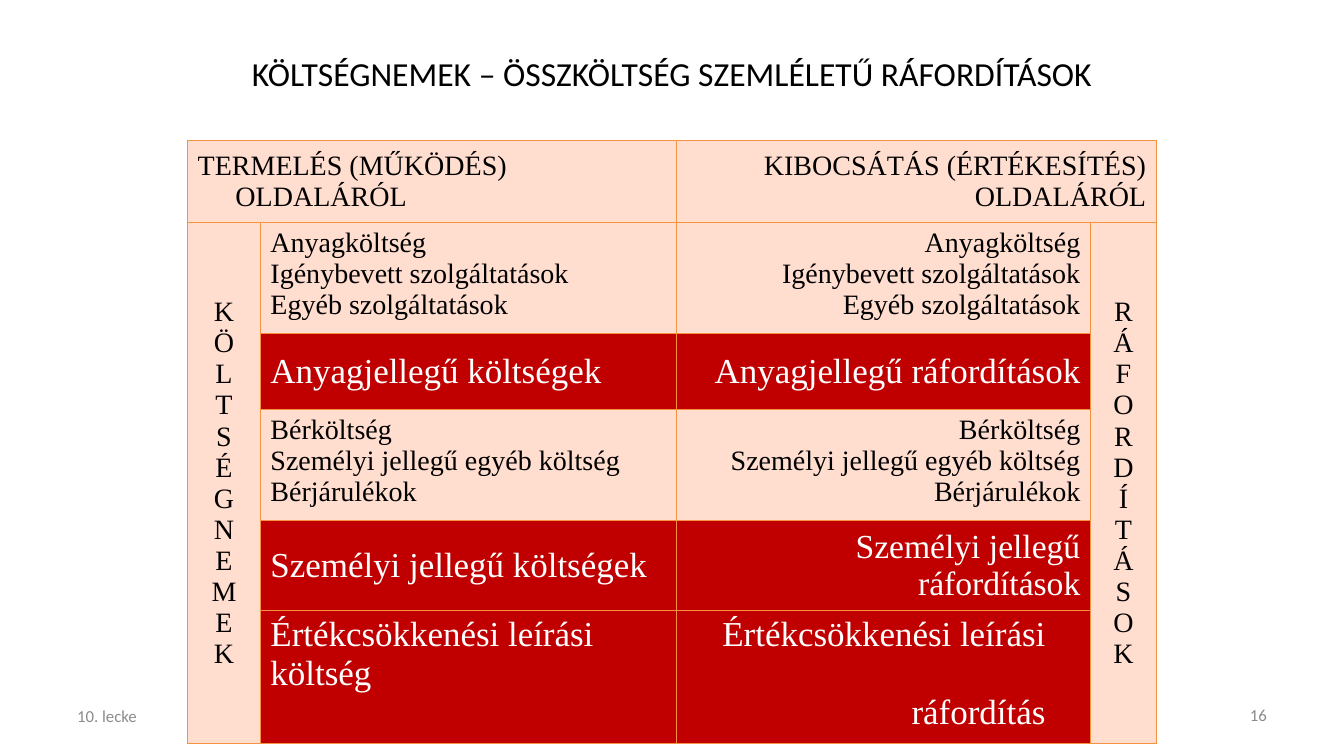
import pptx
import pptx.dml.color
import pptx.enum.text
import pptx.oxml
import pptx.oxml.ns
import pptx.util

Pt = pptx.util.Pt
RGBColor = pptx.dml.color.RGBColor
ALIGN = pptx.enum.text.PP_ALIGN
ANCHOR = pptx.enum.text.MSO_ANCHOR

BLACK = RGBColor(0x00, 0x00, 0x00)
WHITE = RGBColor(0xFF, 0xFF, 0xFF)
GRAY = RGBColor(0x8C, 0x8C, 0x8C)
RED = RGBColor(0xC0, 0x00, 0x00)
PEACH = RGBColor(0xFF, 0xDD, 0xCF)
ORANGE = RGBColor(0xF6, 0x92, 0x40)

COLUMN_WIDTHS = [52, 297, 296, 47]
ROW_HEIGHTS = [59, 59, 54, 76, 58, 63]
HANGING = 27

HEADINGS = [
    (0, "TERMELÉS (MŰKÖDÉS) OLDALÁRÓL", ALIGN.LEFT),
    (2, "KIBOCSÁTÁS (ÉRTÉKESÍTÉS) OLDALÁRÓL", ALIGN.RIGHT),
]
SIDE_LABELS = [(0, "KÖLTSÉGNEMEK"), (3, "RÁFORDÍTÁSOK")]
MATERIALS = "Anyagköltség\nIgénybevett szolgáltatások\nEgyéb szolgáltatások"
WAGES = "Bérköltség\nSzemélyi jellegű egyéb költség\nBérjárulékok"
BODY_ROWS = [
    (MATERIALS, MATERIALS, False, ANCHOR.TOP),
    ("Anyagjellegű költségek", "Anyagjellegű ráfordítások", True, ANCHOR.MIDDLE),
    (WAGES, WAGES, False, ANCHOR.TOP),
    ("Személyi jellegű költségek", "Személyi jellegű ráfordítások", True, ANCHOR.MIDDLE),
    ("Értékcsökkenési leírási\nköltség", "Értékcsökkenési leírási\nráfordítás", True, ANCHOR.TOP),
]


def write_text(text_frame, text, *, size, color=BLACK, font="Calibri", align=ALIGN.LEFT, hanging=0):
    """Fill a text frame with one paragraph per line of text."""
    text_frame.word_wrap = True
    for index, line in enumerate(text.split("\n")):
        paragraph = text_frame.paragraphs[0] if index == 0 else text_frame.add_paragraph()
        paragraph.alignment = align
        if hanging:
            properties = paragraph._p.get_or_add_pPr()
            properties.set("marL", str(Pt(hanging)))
            properties.set("indent", str(-Pt(hanging)))
        run = paragraph.add_run()
        run.text = line
        run.font.size = Pt(size)
        run.font.name = font
        run.font.color.rgb = color


def add_label(slide, box, text, **text_format):
    """Place a vertically centred text box in the given box."""
    shape = slide.shapes.add_textbox(*map(Pt, box))
    shape.text_frame.vertical_anchor = ANCHOR.MIDDLE
    write_text(shape.text_frame, text, **text_format)


def style_cell(cell):
    """Give a cell the light fill and a thin border on all sides."""
    cell.fill.solid()
    cell.fill.fore_color.rgb = PEACH
    properties = cell._tc.get_or_add_tcPr()
    for index, side in enumerate(("lnL", "lnR", "lnT", "lnB")):
        border = pptx.oxml.parse_xml(
            f'<a:{side} {pptx.oxml.ns.nsdecls("a")} w="{Pt(0.75)}">'
            f'<a:solidFill><a:srgbClr val="{ORANGE}"/></a:solidFill></a:{side}>'
        )
        properties.insert(index, border)


def write_cell(cell, text, *, anchor=ANCHOR.MIDDLE, size=20, **text_format):
    """Write text in a table cell with the table's font and indent."""
    cell.vertical_anchor = anchor
    write_text(cell.text_frame, text, size=size, font="Times New Roman", hanging=HANGING, **text_format)


def add_cost_table(slide, left, top):
    """Build the table that sets cost types against expenses."""
    frame = slide.shapes.add_table(
        len(ROW_HEIGHTS), len(COLUMN_WIDTHS), Pt(left), Pt(top), Pt(sum(COLUMN_WIDTHS)), Pt(sum(ROW_HEIGHTS))
    )
    table = frame.table
    table.first_row = False
    table.horz_banding = False
    for column, width in zip(table.columns, COLUMN_WIDTHS):
        column.width = Pt(width)
    for row, height in zip(table.rows, ROW_HEIGHTS):
        row.height = Pt(height)
    for cell in table.iter_cells():
        style_cell(cell)

    for column, text, align in HEADINGS:
        cell = table.cell(0, column)
        cell.merge(table.cell(0, column + 1))
        write_cell(cell, text, align=align)
    for column, text in SIDE_LABELS:
        cell = table.cell(1, column)
        cell.merge(table.cell(len(ROW_HEIGHTS) - 1, column))
        write_cell(cell, "\n".join(text), align=ALIGN.CENTER)

    for row, (cost, expense, is_total, anchor) in enumerate(BODY_ROWS, start=1):
        for column, text, align in ((1, cost, ALIGN.LEFT), (2, expense, ALIGN.RIGHT)):
            cell = table.cell(row, column)
            size = 25 if is_total else 20
            if text == "Személyi jellegű ráfordítások":
                size = 24
            write_cell(cell, text, anchor=anchor, size=size, align=align, color=WHITE if is_total else BLACK)
            if is_total:
                cell.fill.fore_color.rgb = RED

    depreciation, expense = table.cell(5, 2).text_frame.paragraphs
    depreciation._p.get_or_add_pPr().set("marR", str(Pt(25)))
    expense.space_before = Pt(27.7)


def main():
    """Create the slide and save the presentation."""
    presentation = pptx.Presentation()
    presentation.slide_width = Pt(960)
    presentation.slide_height = Pt(540)
    slide = presentation.slides.add_slide(presentation.slide_layouts[6])
    title = "KÖLTSÉGNEMEK – ÖSSZKÖLTSÉG SZEMLÉLETŰ RÁFORDÍTÁSOK"
    add_label(slide, (156, 22, 648, 61), title, size=24, align=ALIGN.CENTER)
    add_cost_table(slide, 134, 100)
    add_label(slide, (48, 492.5, 224, 37.5), "10. lecke", size=12, color=GRAY)
    add_label(slide, (688, 492, 224, 37.5), "16", size=12, color=GRAY, align=ALIGN.RIGHT)
    presentation.save("out.pptx")


if __name__ == "__main__":
    main()
